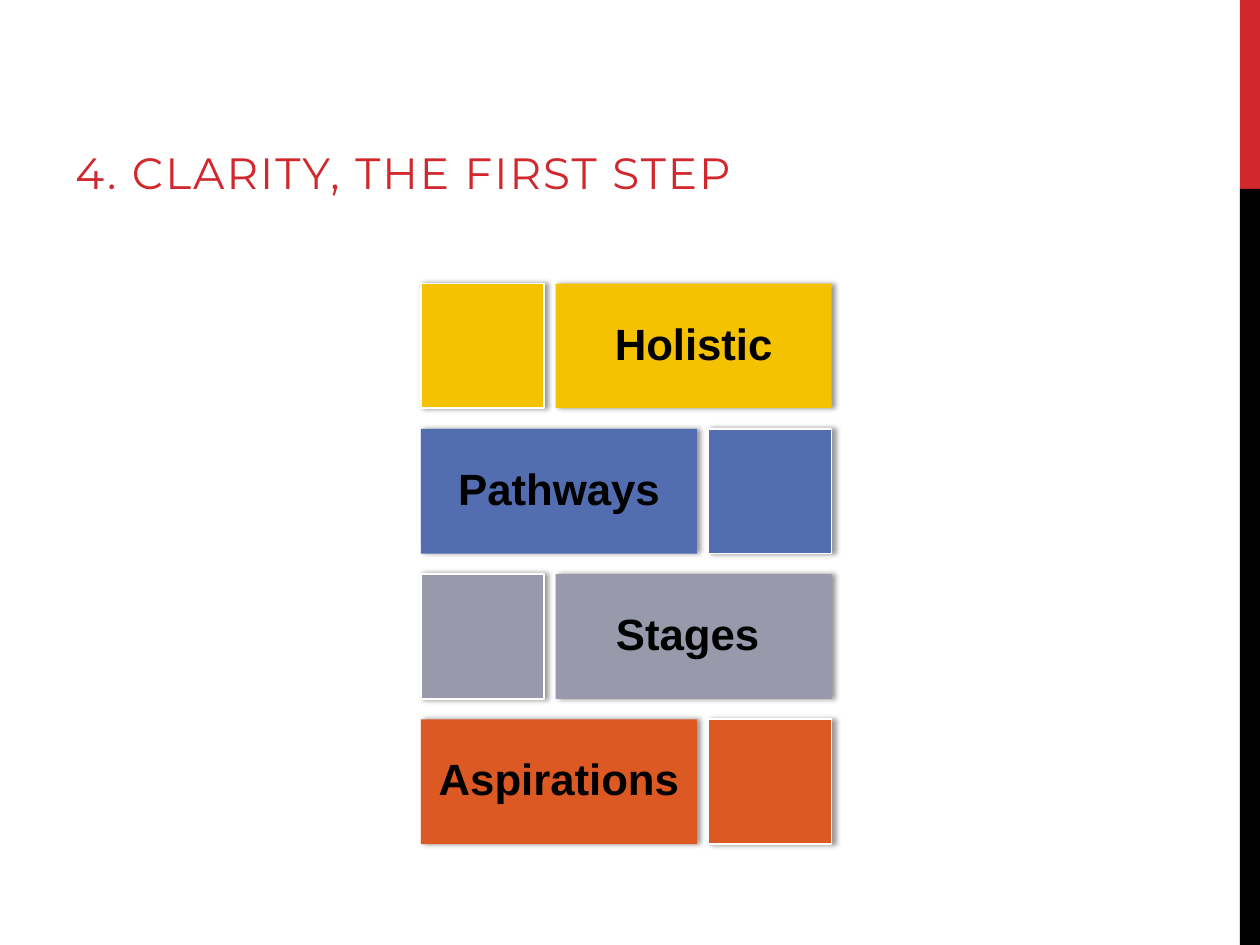
from dataclasses import dataclass

from lxml import etree
from pptx import Presentation
from pptx.dml.color import RGBColor
from pptx.enum.shapes import MSO_SHAPE
from pptx.enum.text import MSO_ANCHOR, PP_ALIGN
from pptx.oxml import parse_xml
from pptx.oxml.ns import qn
from pptx.util import Inches, Pt


@dataclass(frozen=True)
class Theme:
    red: str = "D1282E"
    black: str = "000000"
    white: str = "FFFFFF"
    yellow: str = "F5C201"
    blue: str = "526DB0"
    grey: str = "989AAC"
    orange: str = "DC5924"
    title_font: str = "Montserrat"
    label_font: str = "Arial"
    text_size: float = 25


THEME = Theme()
SHADOW = parse_xml(
    '<a:outerShdw xmlns:a="http://schemas.openxmlformats.org/drawingml/2006/main"'
    f' blurRad="{Pt(3.1)}" dist="{Pt(1.8)}" dir="0" rotWithShape="0">'
    f'<a:srgbClr val="{THEME.black}"><a:alpha val="40000"/></a:srgbClr></a:outerShdw>'
)


def write(shape, text, *, font, color, anchor, align=PP_ALIGN.LEFT,
          bold=False, line_spacing=1.0, tracking=0):
    frame = shape.text_frame
    frame.word_wrap = True
    frame.vertical_anchor = anchor
    paragraph = frame.paragraphs[0]
    paragraph.alignment = align
    paragraph.line_spacing = line_spacing
    run = paragraph.add_run()
    run.text = text
    run.font.name = font
    run.font.size = Pt(THEME.text_size)
    run.font.bold = bold
    run.font.color.rgb = RGBColor.from_string(color)
    if tracking:
        run.font._element.set("spc", str(int(tracking * 100)))


def add_block(left, top, width, height, fill, outline=None, shadow=False):
    block = slide.shapes.add_shape(
        MSO_SHAPE.RECTANGLE, Inches(left), Inches(top), Inches(width), Inches(height))
    block.fill.solid()
    block.fill.fore_color.rgb = RGBColor.from_string(fill)
    if outline:
        block.line.color.rgb = RGBColor.from_string(outline)
        block.line.width = Pt(1)
    else:
        block.line.fill.background()
    block.shadow.inherit = False
    if shadow:
        effects = block._element.spPr.find(qn("a:effectLst"))
        effects.append(etree.fromstring(etree.tostring(SHADOW)))
    return block


prs = Presentation()
prs.slide_width, prs.slide_height = Inches(10), Inches(7.5)
slide = prs.slides.add_slide(prs.slide_layouts[6])

# Side stripe
add_block(9.84, 0, 0.16, 1.5, THEME.red)
add_block(9.84, 1.5, 0.16, 6, THEME.black)

# Title
title = slide.shapes.add_textbox(Inches(0.5), Inches(0.55), Inches(8.5), Inches(1.07))
write(title, "4. CLARITY, THE FIRST STEP", font=THEME.title_font, color=THEME.red,
      anchor=MSO_ANCHOR.BOTTOM, tracking=1.2)

# Steps: label and square swap sides on every other row
steps = [
    ("Holistic", THEME.yellow),
    ("Pathways", THEME.blue),
    ("Stages ", THEME.grey),
    ("Aspirations", THEME.orange),
]
left_edge, right_edge, first_top, row_pitch = 3.34, 6.6, 2.25, 1.153
label_width, square_width, row_height = 2.19, 0.98, 0.99

for row, (step, color) in enumerate(steps):
    top = first_top + row * row_pitch
    if row % 2 == 0:
        label_left, square_left = right_edge - label_width, left_edge
    else:
        label_left, square_left = left_edge, right_edge - square_width
    label = add_block(label_left, top, label_width, row_height, color, shadow=True)
    write(label, step, font=THEME.label_font, color=THEME.black, bold=True,
          anchor=MSO_ANCHOR.MIDDLE, align=PP_ALIGN.CENTER, line_spacing=0.9)
    add_block(square_left, top, square_width, row_height, color,
              outline=THEME.white, shadow=True)

prs.save("out.pptx")
